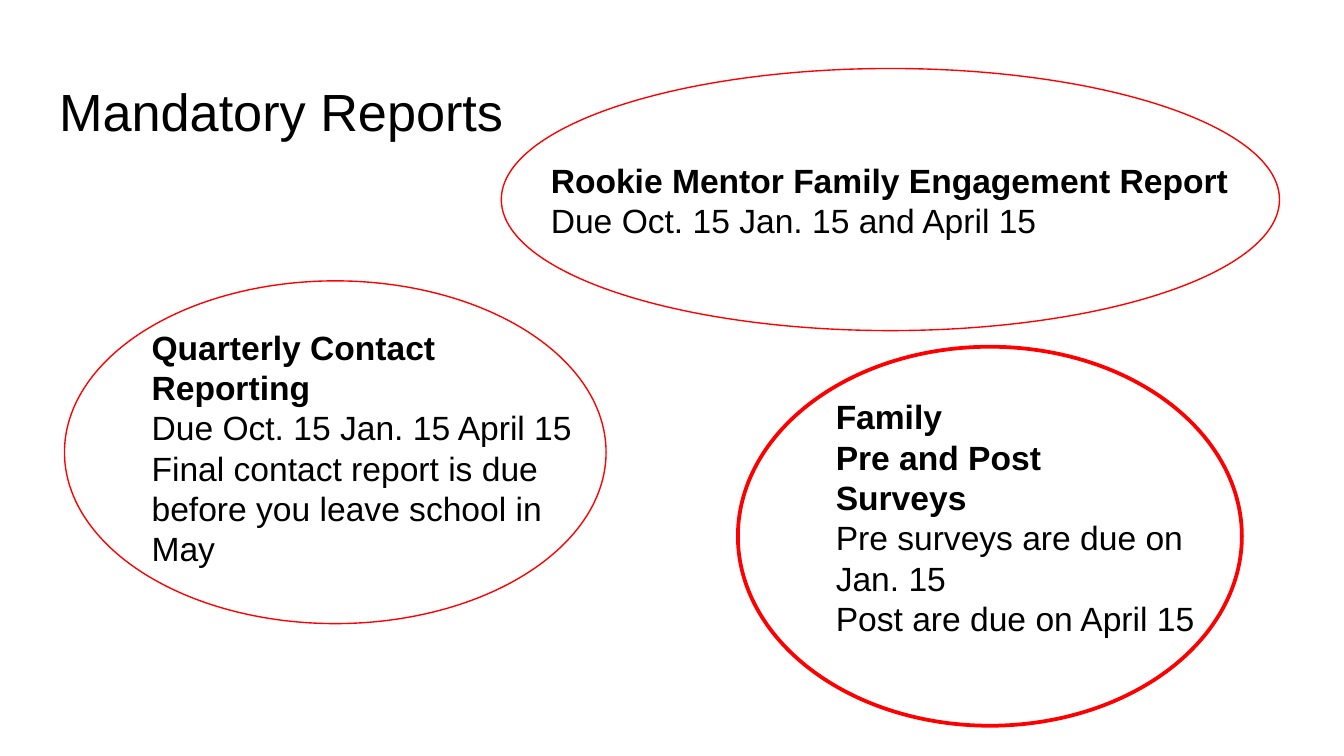
from pptx import Presentation
from pptx.dml.color import RGBColor
from pptx.enum.shapes import MSO_SHAPE
from pptx.enum.text import MSO_ANCHOR, MSO_AUTO_SIZE, PP_ALIGN
from pptx.util import Inches, Pt


def rgb(value):
    return RGBColor.from_string(value)


class SlideBuilder:
    FONT = "Arial"
    TEXT = "000000"
    OUTLINE = "FF0000"

    def __init__(self, prs):
        # Layout 5 is "Title Only"
        self.s = prs.slides.add_slide(prs.slide_layouts[5])

    def format(self, p, size, bold=False):
        p.alignment = PP_ALIGN.LEFT
        p.font.name = self.FONT
        p.font.size = Pt(size)
        p.font.bold = bold
        p.font.color.rgb = rgb(self.TEXT)

    def title(self, text, x, y, w, h):
        sp = self.s.shapes.title
        sp.left, sp.top, sp.width, sp.height = map(Inches, (x, y, w, h))
        tf = sp.text_frame
        tf.text = text
        tf.word_wrap = True
        tf.auto_size = MSO_AUTO_SIZE.NONE
        tf.vertical_anchor = MSO_ANCHOR.TOP
        tf.margin_left = tf.margin_right = Inches(0.1)
        tf.margin_top = tf.margin_bottom = Inches(0.1)
        self.format(tf.paragraphs[0], 28)

    def ellipse(self, x, y, w, h, weight=0.75):
        sp = self.s.shapes.add_shape(
            MSO_SHAPE.OVAL, *map(Inches, (x, y, w, h)))
        sp.shadow.inherit = False
        sp.fill.background()
        sp.line.color.rgb = rgb(self.OUTLINE)
        sp.line.width = Pt(weight)

    def report(self, headings, details, x, y, w, h):
        tf = self.s.shapes.add_textbox(
            *map(Inches, (x, y, w, h))).text_frame
        tf.word_wrap = True
        tf.auto_size = MSO_AUTO_SIZE.SHAPE_TO_FIT_TEXT
        for i, text in enumerate(headings + details):
            p = tf.add_paragraph() if i else tf.paragraphs[0]
            p.text = text
            self.format(p, 18, bold=i < len(headings))


def main():
    # Widescreen slide, 16:9
    prs = Presentation()
    prs.slide_width = Inches(10)
    prs.slide_height = Inches(10) * 9 // 16
    b = SlideBuilder(prs)

    b.title("Mandatory Reports", 0.34, 0.49, 9.32, 0.63)

    # Thin outlines for the engagement and contact reports
    b.ellipse(3.73, 0.51, 5.79, 1.95)
    b.ellipse(0.48, 2.09, 4.03, 2.55)

    # Report names with their due dates
    b.report(["Rookie Mentor Family Engagement Report"],
             ["Due Oct. 15 Jan. 15 and April 15"],
             4, 1.14, 5.41, 0.71)
    b.report(["Quarterly Contact Reporting"],
             ["Due Oct. 15 Jan. 15 April 15 Final contact report is due "
              "before you leave school in May"],
             1.03, 2.38, 3.43, 1.92)
    b.report(["Family", "Pre and Post", "Surveys"],
             ["Pre surveys are due on Jan. 15", "Post are due on April 15"],
             6.12, 2.9, 3.22, 1.92)

    # Heavy outline for the surveys
    b.ellipse(5.49, 2.58, 3.75, 2.82, weight=2)

    prs.save("out.pptx")


if __name__ == "__main__":
    main()
